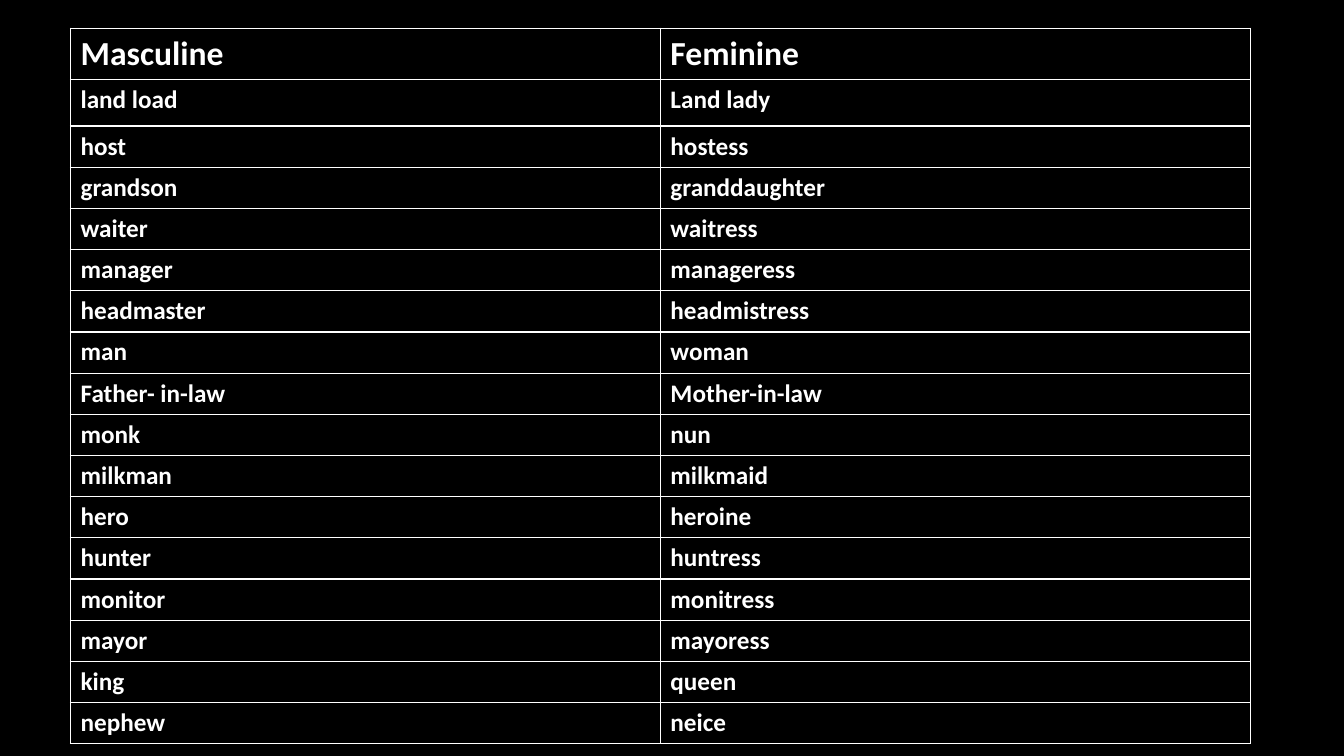
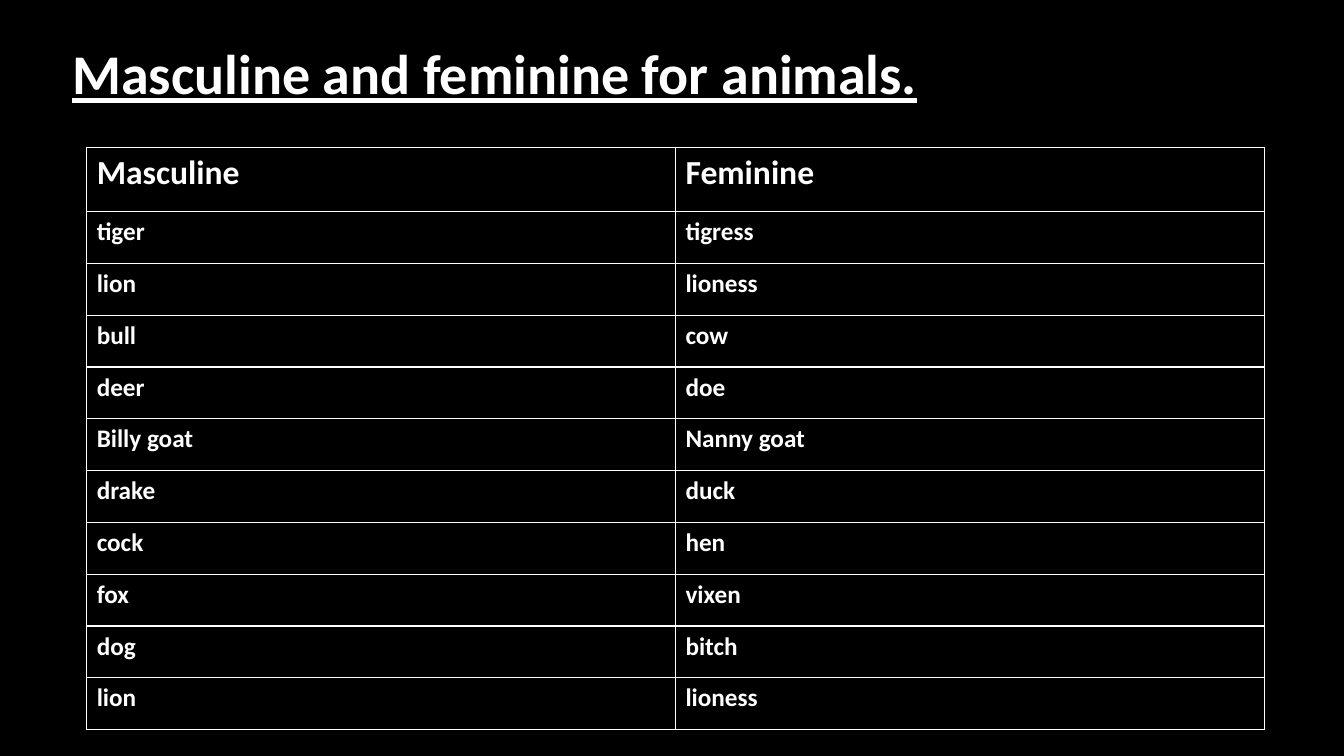
from lxml import etree
from pptx import Presentation
from pptx import util as u
from pptx.dml.color import RGBColor
from pptx.enum import text
from pptx.oxml import ns

COLORS = {"background": "000000", "ink": "FFFFFF"}
FONTS = {
    "title": {"name": "Calibri", "size": u.Pt(40), "bold": True, "underline": True},
    "header": {"name": "Calibri", "size": u.Pt(24), "bold": True},
    "body": {"name": "Calibri", "size": u.Pt(18), "bold": True},
}
PEOPLE = [
    ("Masculine", "Feminine"),
    ("land load", "Land lady"),
    ("host", "hostess"),
    ("grandson", "granddaughter"),
    ("waiter", "waitress"),
    ("manager", "manageress"),
    ("headmaster", "headmistress"),
    ("man", "woman"),
    ("Father- in-law", "Mother-in-law"),
    ("monk", "nun"),
    ("milkman", "milkmaid"),
    ("hero", "heroine"),
    ("hunter", "huntress"),
    ("monitor", "monitress"),
    ("mayor", "mayoress"),
    ("king", "queen"),
    ("nephew", "neice"),
]
ANIMALS = [
    ("Masculine", "Feminine"),
    ("tiger", "tigress"),
    ("lion", "lioness"),
    ("bull", "cow"),
    ("deer", "doe"),
    ("Billy goat", "Nanny goat"),
    ("drake", "duck"),
    ("cock", "hen"),
    ("fox", "vixen"),
    ("dog", "bitch"),
    ("lion", "lioness"),
]


def write(paragraph, words, style):
    """Put words in a paragraph with one of the shared font styles."""
    run = paragraph.add_run()
    run.text = words
    for key, value in FONTS[style].items():
        setattr(run.font, key, value)
    run.font.color.rgb = RGBColor.from_string(COLORS["ink"])


def add_borders(cell):
    """Draw a one-point line on every side of a cell."""
    properties = cell._tc.get_or_add_tcPr()
    for side in ("a:lnL", "a:lnR", "a:lnT", "a:lnB"):
        line = etree.SubElement(properties, ns.qn(side), w=str(u.Pt(1)))
        fill = etree.SubElement(line, ns.qn("a:solidFill"))
        etree.SubElement(fill, ns.qn("a:srgbClr"), val=COLORS["ink"])


def add_slide(prs):
    """Add a blank slide with the shared background."""
    slide = prs.slides.add_slide(prs.slide_layouts[6])
    slide.background.fill.solid()
    slide.background.fill.fore_color.rgb = RGBColor.from_string(COLORS["background"])
    return slide


def add_title(slide, box, words):
    """Write the underlined slide title in its box."""
    frame = slide.shapes.add_textbox(*map(u.Inches, box)).text_frame
    frame.word_wrap = True
    frame.vertical_anchor = text.MSO_ANCHOR.MIDDLE
    frame.paragraphs[0].line_spacing = 0.9
    write(frame.paragraphs[0], words, "title")


def add_word_pairs(slide, box, pairs, top_heights):
    """Fill a box with word pairs; rows below the top ones share the rest."""
    height = box[3]
    rest = len(pairs) - len(top_heights)
    heights = top_heights + [(height - sum(top_heights)) / rest] * rest
    table = slide.shapes.add_table(len(pairs), 2, *map(u.Inches, box)).table
    table.first_row = table.horz_banding = False
    for row, row_height, pair in zip(table.rows, heights, pairs):
        row.height = u.Inches(row_height)
        style = "header" if pair is pairs[0] else "body"
        for cell, word in zip(row.cells, pair):
            add_borders(cell)
            cell.fill.background()
            write(cell.text_frame.paragraphs[0], word, style)


def main():
    """Build and save both slides."""
    prs = Presentation()
    prs.slide_width, prs.slide_height = u.Inches(13.33), u.Inches(7.5)
    add_word_pairs(add_slide(prs), (0.7, 0.28, 11.7, 7.1), PEOPLE, [0.51, 0.46])
    animals = add_slide(prs)
    add_title(animals, (0.62, 0.39, 11.1, 0.74), "Masculine and feminine for animals.")
    add_word_pairs(animals, (0.86, 1.46, 11.68, 5.78), ANIMALS, [0.64])
    prs.save("out.pptx")


if __name__ == "__main__":
    main()
